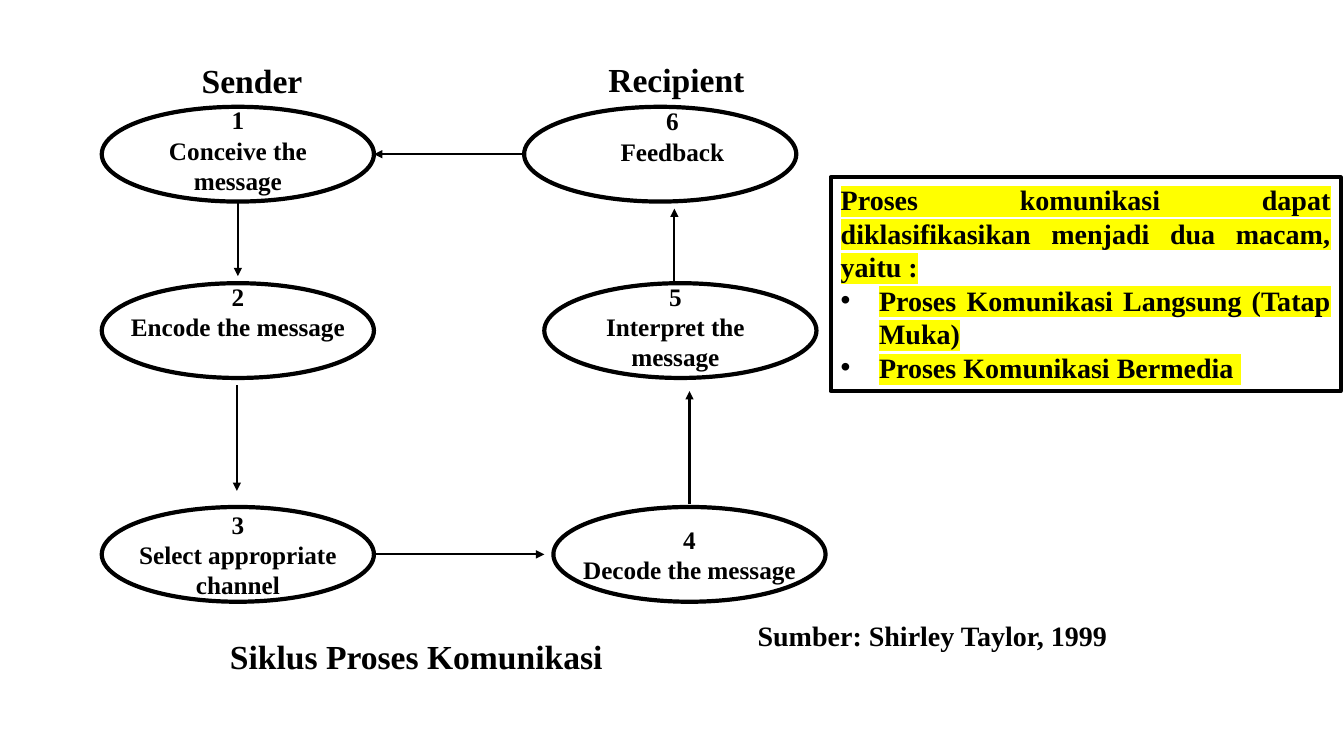
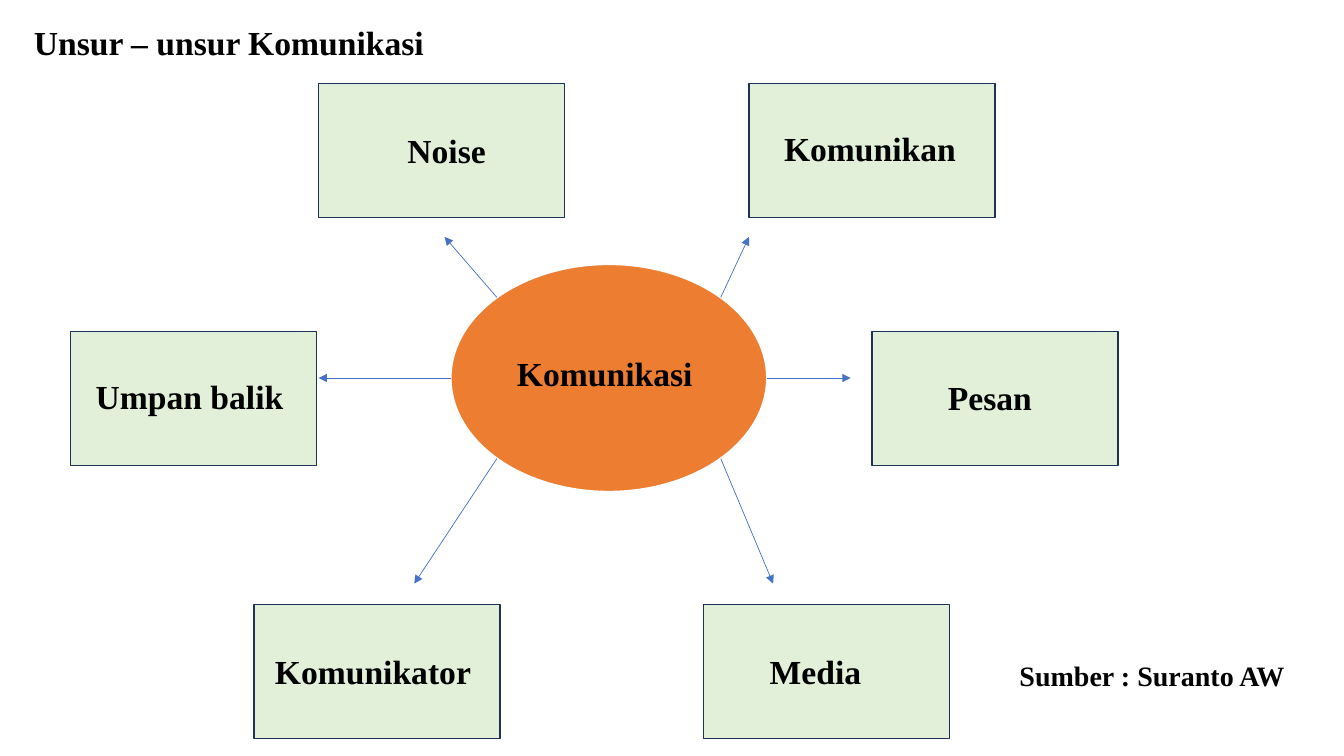
import math

import lxml.etree
import pptx
import pptx.dml.color
import pptx.enum.shapes
import pptx.enum.text
import pptx.oxml.ns
import pptx.util

ALIGN = pptx.enum.text.PP_ALIGN
SHAPE = pptx.enum.shapes.MSO_SHAPE
qn = pptx.oxml.ns.qn

BLACK, WHITE, YELLOW = "000000", "FFFFFF", "FFFF00"
ORANGE, GREEN, NAVY, BLUE = "ED7D31", "E2F0D9", "1E3256", "4472C4"


def color(hex_text):
    return pptx.dml.color.RGBColor.from_string(hex_text)


def cells(n):
    """Length of n grid cells; ten columns or rows make an inch."""
    return pptx.util.Inches(n / 10)


class Deck:
    """Shared style, and the slide being filled."""

    font = "Times New Roman"
    heading, note, step = 24, 20, 18
    label_width, label_height = 42, 5

    def __init__(self, columns, rows):
        self.prs = pptx.Presentation()
        self.prs.slide_width = cells(columns)
        self.prs.slide_height = cells(rows)
        self.s = None

    def add_slide(self, layout):
        self.s = self.prs.slides.add_slide(self.prs.slide_layouts.get_by_name(layout))

    def place(self, sp, left, top, width, height):
        sp.left, sp.top, sp.width, sp.height = map(cells, (left, top, width, height))

    def outline(self, sp, line, weight):
        sp.line.color.rgb = color(line)
        sp.line.width = pptx.util.Pt(weight)

    def paragraph(self, tf, index, text, size, align=ALIGN.CENTER):
        p = tf.paragraphs[0] if index == 0 else tf.add_paragraph()
        p.alignment = align
        p.space_before = pptx.util.Pt(0)
        r = p.add_run()
        r.text = text
        r.font.size = pptx.util.Pt(size)
        r.font.bold = True
        r.font.color.rgb = color(BLACK)
        r.font.name = self.font
        return p

    def frame(self, sp, wrap):
        tf = sp.text_frame
        tf.word_wrap = wrap
        tf.auto_size = pptx.enum.text.MSO_AUTO_SIZE.NONE
        tf.vertical_anchor = pptx.enum.text.MSO_ANCHOR.TOP
        return tf

    def title(self, text, center, top):
        sp = self.s.shapes.title
        self.place(sp, center - self.label_width / 2, top, self.label_width, self.label_height)
        self.paragraph(self.frame(sp, False), 0, text, self.heading)

    def text(self, lines, left, top, width, height, size, wrap=True):
        tf = self.frame(self.s.shapes.add_textbox(*map(cells, (left, top, width, height))), wrap)
        for i, line in enumerate(lines):
            self.paragraph(tf, i, line, size)

    def label(self, text, center, top, size=heading):
        """One line of text, centred on a column."""
        width = len(text) * size / 14
        self.text([text], center - width / 2, top, width, self.label_height, size, False)

    def shape(self, kind, left, top, width, height, fill, line, weight):
        sp = self.s.shapes.add_shape(kind, *map(cells, (left, top, width, height)))
        sp.shadow.inherit = False
        sp.fill.solid()
        sp.fill.fore_color.rgb = color(fill)
        self.outline(sp, line, weight)

    def arrow(self, start, end, line, weight):
        straight = pptx.enum.shapes.MSO_CONNECTOR.STRAIGHT
        sp = self.s.shapes.add_connector(straight, *map(cells, (*start, *end)))
        self.outline(sp, line, weight)
        properties = sp.element.spPr
        ln = properties.find(qn("a:ln"))
        lxml.etree.SubElement(ln, qn("a:tailEnd"), type="triangle")
        lxml.etree.SubElement(properties, qn("a:effectLst"))

    def highlighted_list(self, intro, items, left, top, width, height):
        """Framed body text: an introduction, then bulleted items."""
        sp = self.s.placeholders[1]
        self.place(sp, left, top, width, height)
        self.outline(sp, BLACK, 3)
        tf = self.frame(sp, True)
        for i, text in enumerate([intro, *items]):
            p = self.paragraph(tf, i, text, self.note, ALIGN.JUSTIFY)
            fill = p.runs[0].font.element.find(qn("a:solidFill")) if hasattr(
                p.runs[0].font, "element") else p.runs[0]._r.rPr.find(qn("a:solidFill"))
            highlight = lxml.etree.Element(qn("a:highlight"))
            lxml.etree.SubElement(highlight, qn("a:srgbClr"), val=YELLOW)
            fill.addnext(highlight)
            indent = cells(3.8) if i else 0
            pPr = p._p.get_or_add_pPr()
            pPr.set("marL", str(indent))
            pPr.set("indent", str(-indent))
            if i == 0:
                lxml.etree.SubElement(pPr, qn("a:buNone"))


def cycle_slide(deck):
    deck.add_slide("Title and Content")
    deck.title("Siklus Proses Komunikasi", 41.3, 62.6)
    steps = [  # wording, ellipse left and top, text left and top
        ("Conceive the message", 10.1, 10.6, 11.5, 9.9),
        ("Encode the message", 10.1, 28.1, 11.5, 27.4),
        ("Select appropriate channel", 10.1, 50.3, 11.5, 50),
        ("Decode the message", 54.9, 50.3, 56.3, 51.5),
        ("Interpret the message", 54, 28.1, 54.9, 27.4),
        ("Feedback", 52, 10.6, 54.6, 10),
    ]
    for number, (wording, left, top, text_left, text_top) in enumerate(steps, 1):
        deck.shape(SHAPE.OVAL, left, top, 27, 9.4, WHITE, BLACK, 3)
        deck.text([str(number), wording], text_left, text_top, 24.2, 10.1, deck.step)

    arrows = [
        ((23.6, 20), (23.6, 27.4)),
        ((23.5, 38.2), (23.5, 48.7)),
        ((37.1, 55), (54, 55)),
        ((68.4, 50), (68.4, 38.8)),
        ((66.9, 28), (66.9, 20.7)),
        ((52, 15.3), (37.1, 15.3)),
    ]
    for start, end in arrows:
        deck.arrow(start, end, BLACK, 1.5)

    deck.label("Sender", 25, 5.5)
    deck.label("Recipient", 67.1, 5.4)
    deck.label("Sumber: Shirley Taylor, 1999", 92.5, 60.9, deck.note)
    deck.highlighted_list(
        "Proses komunikasi dapat diklasifikasikan menjadi dua macam, yaitu :",
        ["Proses Komunikasi Langsung (Tatap Muka)", "Proses Komunikasi Bermedia "],
        82.4, 17.6, 50.6, 21.2)


def elements_slide(deck):
    deck.add_slide("Title Only")
    deck.title("Unsur – unsur Komunikasi", 22.7, 1.7)

    center_x, center_y, radius_x, radius_y = 60.4, 37.5, 15.7, 11.3
    deck.shape(SHAPE.OVAL, center_x - radius_x, center_y - radius_y,
               2 * radius_x, 2 * radius_y, ORANGE, WHITE, 1.5)
    deck.label("Komunikasi", 60, 34.5)

    elements = [  # wording, box left and top, text centre and top, arrow angle and tip
        ("Pesan", 86.5, 32.9, 98.2, 36.9, 0, (84.4, 37.5)),
        ("Media", 69.8, 60, 80.9, 64.1, 45, (76.7, 57.9)),
        ("Komunikator", 25.2, 60, 37, 64.1, 135, (41.1, 57.9)),
        ("Umpan balik", 7, 32.9, 18.8, 36.8, 180, (31.6, 37.5)),
        ("Noise", 31.6, 8.3, 44.3, 12.4, 225, (44.1, 23.5)),
        ("Komunikan", 74.3, 8.3, 86.3, 12.2, 315, (74.3, 23.5)),
    ]
    for wording, left, top, text_center, text_top, degrees, tip in elements:
        deck.shape(SHAPE.RECTANGLE, left, top, 24.4, 13.3, GREEN, NAVY, 1)
        deck.label(wording, text_center, text_top)
        angle = math.radians(degrees)
        rim = (center_x + radius_x * math.cos(angle), center_y + radius_y * math.sin(angle))
        deck.arrow(rim, tip, BLUE, 0.5)
    deck.label("Sumber : Suranto AW", 114.3, 64.8, deck.note)


def main():
    deck = Deck(133.33, 75)
    cycle_slide(deck)
    elements_slide(deck)
    deck.prs.save("out.pptx")


if __name__ == "__main__":
    main()
